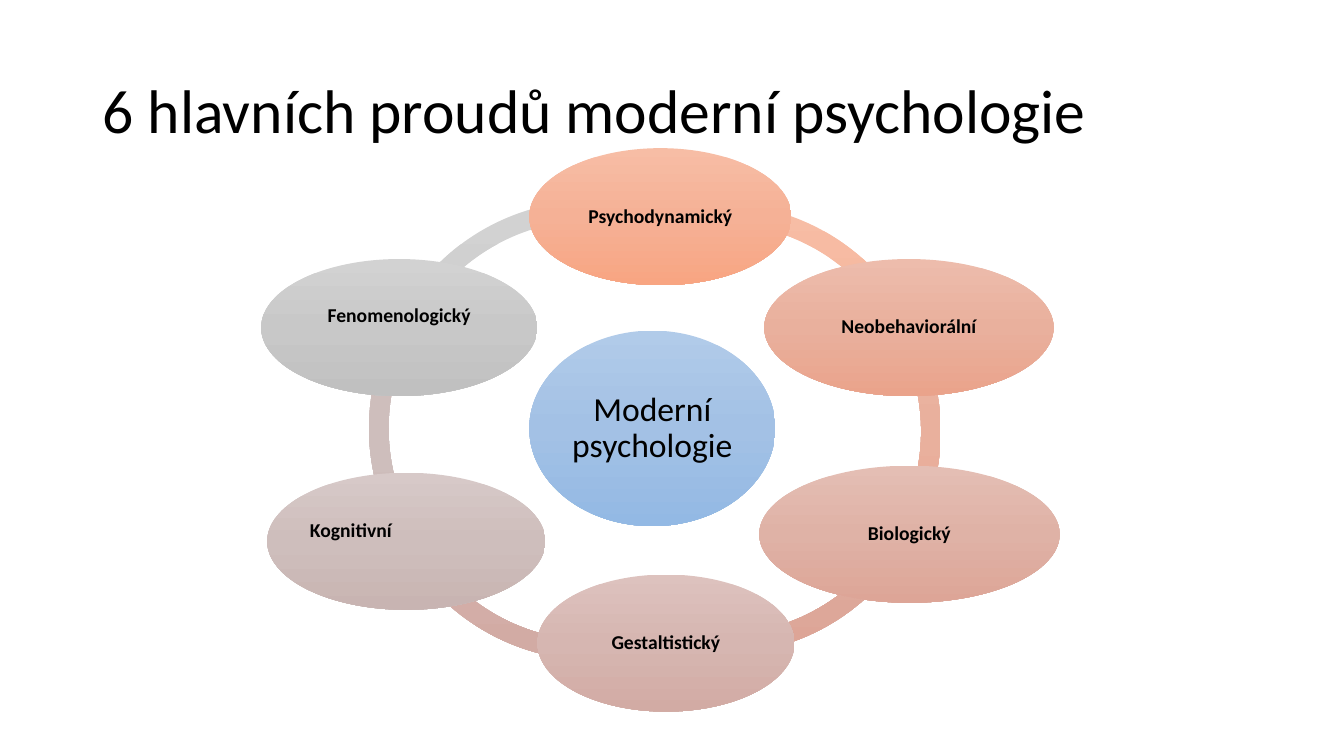
"""Builds a slide with a ring of six schools around modern psychology."""
import copy

import pptx
import pptx.dml.color
import pptx.enum.shapes
import pptx.enum.text
import pptx.oxml.ns
import pptx.util

RGB = pptx.dml.color.RGBColor
KIND = pptx.enum.shapes.MSO_SHAPE
ALIGN = pptx.enum.text.PP_ALIGN
ANCHOR = pptx.enum.text.MSO_ANCHOR
FIT = pptx.enum.text.MSO_AUTO_SIZE

BLACK = RGB(0x00, 0x00, 0x00)
BLUE = RGB(0xB1, 0xCB, 0xE9), RGB(0xA3, 0xC1, 0xE5), RGB(0x93, 0xB9, 0xE4)
ORANGE = RGB(0xF7, 0xBD, 0xA5), RGB(0xF5, 0xB1, 0x96), RGB(0xF8, 0xA5, 0x82)
CORAL = RGB(0xED, 0xBC, 0xAC), RGB(0xE9, 0xB0, 0x9D), RGB(0xEA, 0xA3, 0x8B)
SALMON = RGB(0xE4, 0xBE, 0xB4), RGB(0xDF, 0xB2, 0xA6), RGB(0xDD, 0xA5, 0x97)
ROSE = RGB(0xDD, 0xC2, 0xBE), RGB(0xD6, 0xB6, 0xB1), RGB(0xD2, 0xAB, 0xA4)
MAUVE = RGB(0xD7, 0xC9, 0xC8), RGB(0xCE, 0xBE, 0xBC), RGB(0xC8, 0xB4, 0xB2)
GREY = RGB(0xD2, 0xD2, 0xD2), RGB(0xC8, 0xC8, 0xC8), RGB(0xC0, 0xC0, 0xC0)

SCALE = 9144
ARC = 432
BAND = 0.045
OVAL = 136

SCHOOLS = [
    ("Psychodynamický", ORANGE, (525, 147, 260), (496, 202, 152.6, 200.3), {}),
    ("Neobehaviorální", CORAL, (758, 257, 287), (501, 212, 198.45, 17.24), {}),
    ("Biologický", SALMON, (753, 462, 298), (498, 217, 16.27, 62.85), {}),
    ("Gestaltistický", ROSE, (533, 570, 255), (373, 223, 42.24, 91.26), {}),
    ("Kognitivní", MAUVE, (265, 469, 276), (366, 209, 88.78, 125.06),
     {"align": ALIGN.LEFT, "lift": 20}),
    ("Fenomenologický", GREY, (259, 257, 274), (371, 199, 123.13, 173.16),
     {"lift": 23}),
]


def px(count):
    return pptx.util.Emu(count * SCALE)


class Deck:
    """Holds the style and the current slide."""

    def __init__(self, wide, high):
        self.show = pptx.Presentation()
        self.show.slide_width, self.show.slide_height = px(wide), px(high)
        self.slide = self.show.slides.add_slide(self.show.slide_layouts[5])
        self.face = {"name": "Calibri", "bold": False}

    def place(self, shape, box):
        for name, count in zip(("left", "top", "width", "height"), box):
            setattr(shape, name, px(count))

    def label(self, shape, text, size, align, bold=False, frame=None):
        body = shape.text_frame
        body.text = text
        para = body.paragraphs[0]
        para.font.color.rgb = BLACK
        font = {**self.face, "size": pptx.util.Pt(size), "bold": bold}
        looks = [
            (body, {"word_wrap": True, "auto_size": FIT.NONE,
                    "vertical_anchor": ANCHOR.MIDDLE, **(frame or {})}),
            (para, {"alignment": align, "line_spacing": 0.9}),
            (para.font, font),
        ]
        for target, values in looks:
            for name, value in values.items():
                setattr(target, name, value)

    def title(self, text, box):
        shape = self.slide.shapes.title
        self.place(shape, box)
        self.label(shape, text, 44, ALIGN.LEFT)

    def shape(self, kind, box, tones):
        shape = self.slide.shapes.add_shape(kind, *map(px, box))
        shape.shadow.inherit = False
        shape.line.fill.background()
        fill = shape.fill
        fill.gradient()
        stops = shape._element.spPr.find(".//" + pptx.oxml.ns.qn("a:gsLst"))
        stops.insert(1, copy.deepcopy(stops[0]))
        fill.gradient_angle = 270
        for step, (stop, tone) in enumerate(zip(fill.gradient_stops, tones)):
            stop.color.rgb = tone
            stop.position = step / 2
        return shape

    def arc(self, left, top, start, end, tones):
        shape = self.shape(KIND.BLOCK_ARC, (left, top, ARC, ARC), tones)
        for slot, value in enumerate((start, end, BAND)):
            shape.adjustments[slot] = value

    def oval(self, text, box, tones, size=14, bold=True,
             align=ALIGN.CENTER, lift=0):
        shape = self.shape(KIND.OVAL, box, tones)
        sides = ("left", "top", "right", "bottom")
        frame = {"margin_" + side: px(2) for side in sides}
        frame["margin_bottom"] = px(2 + lift)
        self.label(shape, text, size, align, bold, frame)


def main():
    deck = Deck(1333, 750)
    deck.title("6 hlavních proudů moderní psychologie", (92, 40, 1150, 145))
    for _, tones, _, arc, _ in reversed(SCHOOLS):
        deck.arc(*arc, tones)
    deck.oval("Moderní psychologie", (525, 328, 244, 194), BLUE, 24, False)
    for text, tones, spot, _, extra in SCHOOLS:
        deck.oval(text, (*spot, OVAL), tones, **extra)
    deck.show.save("out.pptx")


if __name__ == "__main__":
    main()
